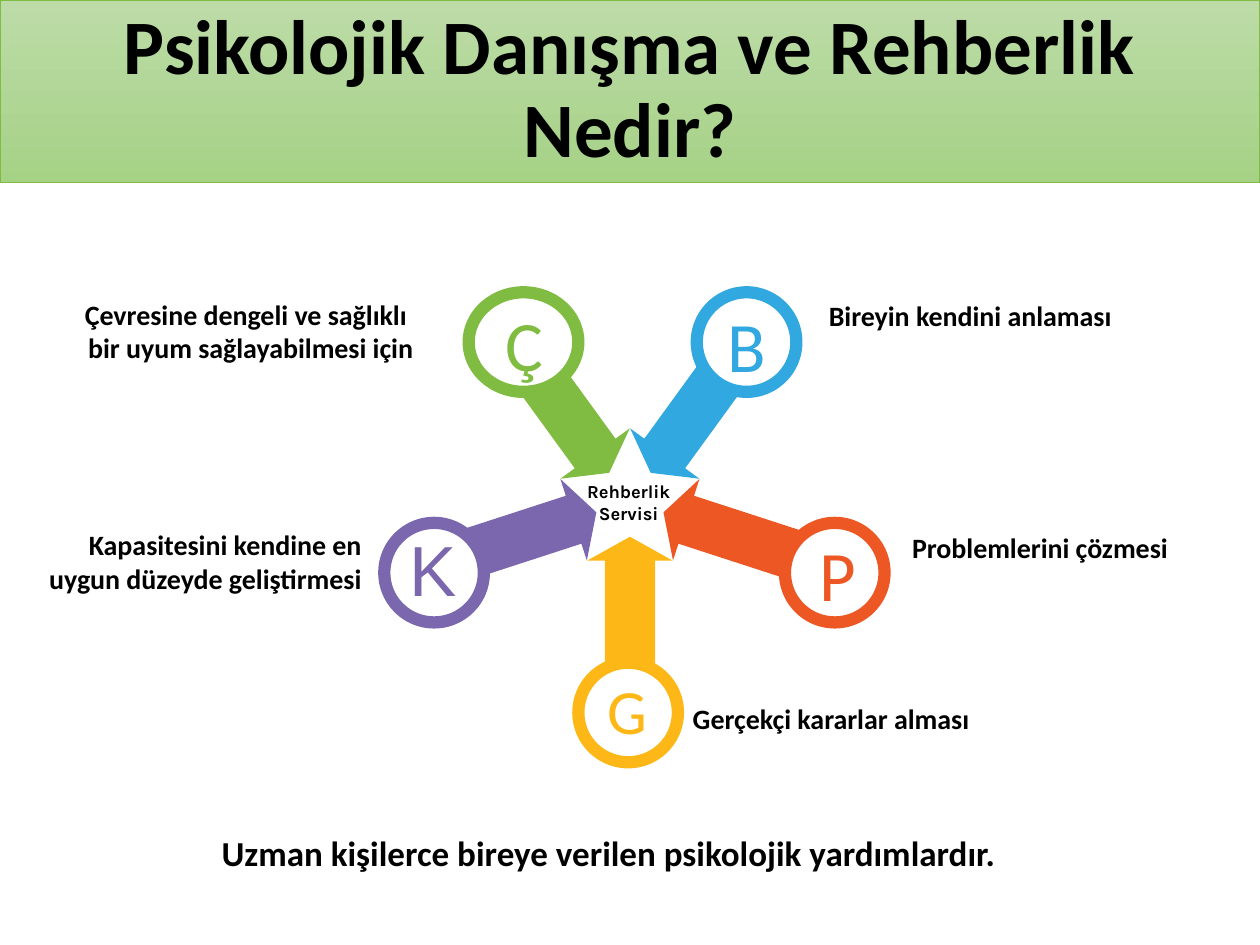
"""Build a slide of five lettered arrows pointing at the guidance service."""
from dataclasses import dataclass
from math import cos, radians, sin

from pptx import Presentation
from pptx.dml.color import RGBColor
from pptx.enum.shapes import MSO_SHAPE
from pptx.enum.text import MSO_ANCHOR, MSO_AUTO_SIZE, PP_ALIGN
from pptx.shapes.autoshape import Shape
from pptx.slide import Slide
from pptx.util import Emu, Pt

EMU_PER_PX = 9144
HUB = (500, 398)
ARROW = ((0, 28), (-34, 47), (-20, 47), (-20, 159), (20, 159), (20, 47), (34, 47))


@dataclass(frozen=True)
class Theme:
    font: str = "Calibri"
    hub_font: str = "Karla"
    black: str = "000000"
    white: str = "FFFFFF"
    green: str = "7FBC41"
    blue: str = "31A8DF"
    orange: str = "EC5724"
    yellow: str = "FDB817"
    purple: str = "7B67AD"
    band_top: str = "BCDBA7"
    band_bottom: str = "A6D286"
    title_size: float = 44
    closing_size: float = 20
    label_size: float = 16
    hub_size: float = 10.5
    letter_size: float = 40.5
    small_letter_size: float = 36
    band_line: float = 0.5
    ring_line: float = 7


THEME = Theme()


@dataclass(frozen=True)
class Box:
    left: int
    top: int
    width: int
    height: int

    def emu(self) -> tuple[Emu, ...]:
        """Return the box in EMU."""
        return tuple(px(value) for value in (self.left, self.top, self.width, self.height))


@dataclass(frozen=True)
class TextStyle:
    size: float
    color: str = THEME.black
    font: str = THEME.font
    bold: bool = True
    align: PP_ALIGN = PP_ALIGN.LEFT


@dataclass(frozen=True)
class Spoke:
    letter: str
    color: str
    angle: int
    ring: Box
    letter_box: Box
    size: float = THEME.letter_size
    font: str = THEME.font


@dataclass(frozen=True)
class Label:
    lines: tuple[str, ...]
    box: Box
    style: TextStyle
    wrap: bool = False


LEFT_LABEL = TextStyle(THEME.label_size)
RIGHT_LABEL = TextStyle(THEME.label_size, align=PP_ALIGN.RIGHT)
HUB_LABEL = TextStyle(THEME.hub_size, font=THEME.hub_font, align=PP_ALIGN.CENTER)
TITLE = TextStyle(THEME.title_size, align=PP_ALIGN.CENTER)
CLOSING = TextStyle(THEME.closing_size)

SPOKES = (
    Spoke("Ç", THEME.green, 216, Box(372, 232, 87, 79), Box(395, 253, 42, 38)),
    Spoke("B", THEME.blue, 144, Box(553, 232, 79, 79), Box(574, 254, 38, 38)),
    Spoke("P", THEME.orange, 72, Box(623, 415, 79, 79), Box(646, 436, 38, 38)),
    Spoke("G", THEME.yellow, 0, Box(459, 526, 79, 79), Box(479, 544, 38, 38),
          size=THEME.small_letter_size),
    Spoke("K", THEME.purple, 288, Box(305, 415, 79, 79), Box(325, 432, 38, 38), font="Arial"),
)

LABELS = (
    Label(("Rehberlik", "Servisi"), Box(455, 376, 88, 45), HUB_LABEL),
    Label(("Bireyin kendini anlaması",), Box(648, 232, 247, 37), LEFT_LABEL),
    Label(("Problemlerini çözmesi",), Box(714, 416, 226, 37), LEFT_LABEL),
    Label((" Gerçekçi kararlar alması",), Box(535, 552, 247, 37), LEFT_LABEL),
    Label(("Kapasitesini kendine en uygun düzeyde geliştirmesi",),
          Box(24, 414, 273, 64), RIGHT_LABEL, wrap=True),
    Label(("Çevresine dengeli ve sağlıklı ", "bir uyum sağlayabilmesi için"),
          Box(49, 231, 289, 64), RIGHT_LABEL),
    Label(("Uzman kişilerce bireye verilen psikolojik yardımlardır.",),
          Box(166, 655, 755, 44), CLOSING, wrap=True),
)


def px(value: float) -> Emu:
    """Turn px into EMU."""
    return Emu(round(value * EMU_PER_PX))


def write(shape: Shape, lines: tuple[str, ...], style: TextStyle) -> None:
    """Write each line as a paragraph holding one run."""
    frame = shape.text_frame
    for index, line in enumerate(lines):
        paragraph = frame.add_paragraph() if index else frame.paragraphs[0]
        paragraph.alignment = style.align
        run = paragraph.add_run()
        run.text = line
        run.font.size = Pt(style.size)
        run.font.name = style.font
        run.font.bold = style.bold
        run.font.color.rgb = RGBColor.from_string(style.color)


def paint(shape: Shape, fill: str) -> None:
    """Give a shape a plain fill without shadow."""
    shape.shadow.inherit = False
    shape.fill.solid()
    shape.fill.fore_color.rgb = RGBColor.from_string(fill)


def outline(shape: Shape, color: str, width: float) -> None:
    """Give a shape a solid outline."""
    shape.line.color.rgb = RGBColor.from_string(color)
    shape.line.width = Pt(width)


def draw_title(slide: Slide) -> None:
    """Draw the title on its gradient band."""
    band = slide.shapes.add_shape(MSO_SHAPE.RECTANGLE, *Box(0, 0, 1000, 145).emu())
    band.shadow.inherit = False
    band.fill.gradient()
    band.fill.gradient_angle = 270
    for stop, color in zip(band.fill.gradient_stops, (THEME.band_top, THEME.band_bottom)):
        stop.color.rgb = RGBColor.from_string(color)
    for stop, position in zip(band.fill.gradient_stops, (0, 1)):
        stop.position = position
    outline(band, THEME.green, THEME.band_line)
    band.text_frame.word_wrap = True
    band.text_frame.vertical_anchor = MSO_ANCHOR.MIDDLE
    write(band, ("Psikolojik Danışma ve Rehberlik Nedir?",), TITLE)
    band.text_frame.paragraphs[0].line_spacing = 0.9


def draw_arrow(slide: Slide, spoke: Spoke) -> None:
    """Draw the arrow turned about the hub by the spoke's angle."""
    sine, cosine = sin(radians(spoke.angle)), cos(radians(spoke.angle))
    points = [(px(HUB[0] + x * cosine + y * sine), px(HUB[1] - x * sine + y * cosine))
              for x, y in ARROW]
    builder = slide.shapes.build_freeform(*points[0])
    builder.add_line_segments(points[1:], close=True)
    arrow = builder.convert_to_shape()
    paint(arrow, spoke.color)
    arrow.line.fill.background()


def draw_label(slide: Slide, label: Label) -> None:
    """Draw a text box that grows with its text."""
    box = slide.shapes.add_textbox(*label.box.emu())
    box.text_frame.word_wrap = label.wrap
    box.text_frame.auto_size = MSO_AUTO_SIZE.SHAPE_TO_FIT_TEXT
    write(box, label.lines, label.style)


def draw_ring(slide: Slide, spoke: Spoke) -> None:
    """Draw the ring at the arrow's foot and its letter."""
    ring = slide.shapes.add_shape(MSO_SHAPE.OVAL, *spoke.ring.emu())
    paint(ring, THEME.white)
    outline(ring, spoke.color, THEME.ring_line)
    box = slide.shapes.add_textbox(*spoke.letter_box.emu())
    frame = box.text_frame
    frame.margin_left = frame.margin_right = frame.margin_top = frame.margin_bottom = 0
    frame.word_wrap = False
    frame.vertical_anchor = MSO_ANCHOR.MIDDLE
    write(box, (spoke.letter,),
          TextStyle(spoke.size, spoke.color, spoke.font, False, PP_ALIGN.CENTER))


def main() -> None:
    """Build and save the slide."""
    presentation = Presentation()
    presentation.slide_width, presentation.slide_height = px(1000), px(750)
    slide = presentation.slides.add_slide(presentation.slide_layouts[6])
    draw_title(slide)
    for spoke in SPOKES:
        draw_arrow(slide, spoke)
    for label in LABELS:
        draw_label(slide, label)
    for spoke in SPOKES:
        draw_ring(slide, spoke)
    presentation.save("out.pptx")


if __name__ == "__main__":
    main()
